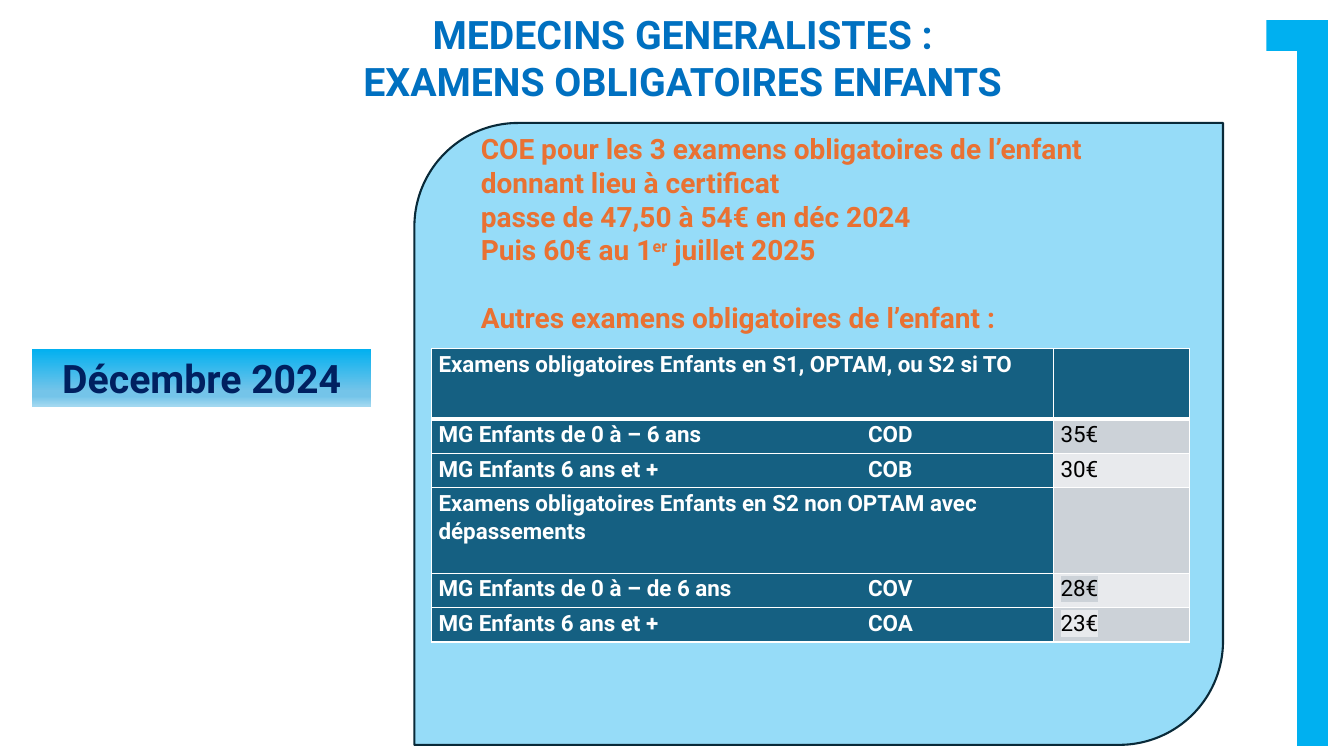
from dataclasses import dataclass

from lxml.etree import SubElement
from pptx import Presentation
from pptx.dml.color import RGBColor
from pptx.enum.shapes import MSO_SHAPE
from pptx.enum.text import MSO_ANCHOR, MSO_AUTO_SIZE, PP_ALIGN
from pptx.oxml.ns import qn
from pptx.util import Inches, Pt


@dataclass(frozen=True)
class Theme:
    font: str = "Roboto"
    title_blue: str = "0070C0"
    bright_blue: str = "00B0F0"
    navy: str = "002060"
    panel: str = "96DCF8"
    panel_edge: str = "092A39"
    orange: str = "E97132"
    table_dark: str = "156082"
    band_dark: str = "CCD2D8"
    band_light: str = "E8EAED"
    white: str = "FFFFFF"
    black: str = "000000"
    title_size: int = 28
    body_size: int = 20
    table_size: int = 16


@dataclass(frozen=True)
class FeeRow:
    label: str
    height: float
    value_fill: str
    code: str = ""
    fee: str = ""
    highlight: str = ""


THEME = Theme()
FEE_ROWS = [
    FeeRow("Examens obligatoires Enfants en S1, OPTAM, ou S2 si TO", 0.7, THEME.table_dark),
    FeeRow("MG Enfants de 0 à – 6 ans", 0.34, THEME.band_dark, "COD", "35€"),
    FeeRow("MG Enfants 6 ans et +", 0.34, THEME.band_light, "COB", "30€"),
    FeeRow("Examens obligatoires Enfants en S2 non OPTAM avec dépassements", 0.85, THEME.band_dark),
    FeeRow("MG Enfants de 0 à – de 6 ans", 0.34, THEME.band_light, "COV", "28€", THEME.band_dark),
    FeeRow("MG Enfants 6 ans et +", 0.34, THEME.band_dark, "COA", "23€", THEME.band_light),
]
COLUMN_WIDTHS = (6.17, 1.35)
CODE_TAB = 4.26


def box(left: float, top: float, width: float, height: float) -> tuple:
    return tuple(Inches(length) for length in (left, top, width, height))


def add_run(paragraph, text: str, size: int, color: str, bold: bool = True):
    run = paragraph.add_run()
    run.text = text
    run.font.name = THEME.font
    run.font.size = Pt(size)
    run.font.bold = bold
    run.font.color.rgb = RGBColor.from_string(color)
    return run


def add_solid_shape(slide, kind: MSO_SHAPE, place: tuple, color: str):
    shape = slide.shapes.add_shape(kind, *place)
    shape.shadow.inherit = False
    shape.fill.solid()
    shape.fill.fore_color.rgb = RGBColor.from_string(color)
    shape.line.fill.background()
    return shape


def add_color(parent, color: str) -> None:
    SubElement(parent, qn("a:srgbClr"), val=color)


def set_gradient(shape, stops: list[tuple[int, str]]) -> None:
    shape.fill.gradient()
    shape.fill.gradient_angle = 270
    stop_list = shape._element.spPr.find(qn("a:gradFill")).find(qn("a:gsLst"))
    for old_stop in list(stop_list):
        stop_list.remove(old_stop)
    for percent, color in stops:
        add_color(SubElement(stop_list, qn("a:gs"), pos=str(percent * 1000)), color)


def set_highlight(run, color: str) -> None:
    properties = run.font._element
    highlight = SubElement(properties, qn("a:highlight"))
    add_color(highlight, color)
    properties.find(qn("a:solidFill")).addnext(highlight)


def format_cell(cell, fill: str, top: int, bottom: int) -> None:
    cell.margin_left = cell.margin_right = Inches(0.07)
    cell.margin_top, cell.margin_bottom = Inches(0.01), 0
    properties = cell._tc.get_or_add_tcPr()
    for side, width in (("L", 1), ("R", 1), ("T", top), ("B", bottom)):
        border = SubElement(properties, qn(f"a:ln{side}"), w=str(Pt(width)))
        add_color(SubElement(border, qn("a:solidFill")), THEME.white)
    cell.fill.solid()
    cell.fill.fore_color.rgb = RGBColor.from_string(fill)
    paragraph = cell.text_frame.paragraphs[0]
    paragraph.line_spacing = 1.07
    paragraph.space_after = Pt(8)


def add_tab_stop(paragraph, position: float) -> None:
    tabs = SubElement(paragraph._p.get_or_add_pPr(), qn("a:tabLst"))
    SubElement(tabs, qn("a:tab"), pos=str(Inches(position)), algn="l")


def add_title(slide) -> None:
    title = slide.shapes.title
    title.left, title.top, title.width, title.height = box(2, 0.05, 9.54, 1.04)
    frame = title.text_frame
    frame.auto_size = MSO_AUTO_SIZE.NONE
    frame.vertical_anchor = MSO_ANCHOR.TOP
    lines = ("MEDECINS GENERALISTES :", "EXAMENS OBLIGATOIRES ENFANTS")
    for index, line in enumerate(lines):
        paragraph = frame.add_paragraph() if index else frame.paragraphs[0]
        paragraph.alignment = PP_ALIGN.CENTER
        add_run(paragraph, line, THEME.title_size, THEME.title_blue)


def add_date_label(slide) -> None:
    label = add_solid_shape(slide, MSO_SHAPE.RECTANGLE, box(0.32, 3.46, 3.36, 0.57), THEME.bright_blue)
    set_gradient(label, [(0, THEME.bright_blue), (74, "74C4E9"), (83, "74C4E9"), (100, "A2D8F0")])
    paragraph = label.text_frame.paragraphs[0]
    paragraph.alignment = PP_ALIGN.CENTER
    add_run(paragraph, "Décembre 2024", THEME.title_size, THEME.navy)


def add_announcement(slide) -> None:
    frame = slide.shapes.add_textbox(*box(4.67, 1.26, 7.02, 2.15)).text_frame
    frame.word_wrap = True
    style = (THEME.body_size, THEME.orange)

    increase = frame.paragraphs[0]
    add_run(increase, "COE pour les 3 examens obligatoires de l’enfant donnant lieu à certificat", *style)
    increase.add_line_break()
    add_run(increase, "passe de 47,50 à 54€ en déc 2024", *style)

    next_step = frame.add_paragraph()
    add_run(next_step, "Puis 60€ au 1", *style)
    ordinal = add_run(next_step, "er", *style)
    ordinal.font._element.set("baseline", "30000")
    add_run(next_step, " juillet 2025", *style)

    other_exams = frame.add_paragraph()
    other_exams.space_before = Pt(24)
    add_run(other_exams, "Autres examens obligatoires de l’enfant :", *style)


def add_fee_table(slide) -> None:
    place = box(4.28, 3.46, sum(COLUMN_WIDTHS), sum(row.height for row in FEE_ROWS))
    table = slide.shapes.add_table(len(FEE_ROWS), len(COLUMN_WIDTHS), *place).table
    table.first_row = table.horz_banding = False
    for column, width in zip(table.columns, COLUMN_WIDTHS):
        column.width = Inches(width)
    for index, row in enumerate(FEE_ROWS):
        table.rows[index].height = Inches(row.height)
        label_cell, fee_cell = table.cell(index, 0), table.cell(index, 1)
        top, bottom = (3 if index == 1 else 1), (3 if index == 0 else 1)
        format_cell(label_cell, THEME.table_dark, top, bottom)
        format_cell(fee_cell, row.value_fill, top, bottom)
        label = label_cell.text_frame.paragraphs[0]
        add_run(label, row.label, THEME.table_size, THEME.white)
        if row.code:
            add_tab_stop(label, CODE_TAB)
            add_run(label, "\t" + row.code, THEME.table_size, THEME.white)
        if row.fee:
            fee = add_run(fee_cell.text_frame.paragraphs[0], row.fee, THEME.table_size, THEME.black, False)
            if row.highlight:
                set_highlight(fee, row.highlight)


def main() -> None:
    deck = Presentation()
    deck.slide_width, deck.slide_height = Inches(13.33), Inches(7.5)
    slide = deck.slides.add_slide(deck.slide_layouts[5])

    # Title and corner bracket
    add_title(slide)
    bracket = add_solid_shape(slide, MSO_SHAPE.CORNER, box(12.56, 0.2, 0.61, 7.2), THEME.bright_blue)
    bracket.rotation = 180

    # Date and content panel
    add_date_label(slide)
    panel = add_solid_shape(slide, MSO_SHAPE.ROUND_2_DIAG_RECTANGLE, box(4.11, 1.22, 8.02, 6.17), THEME.panel)
    panel.line.color.rgb = RGBColor.from_string(THEME.panel_edge)
    panel.line.width = Pt(1.5)

    # Fees
    add_announcement(slide)
    add_fee_table(slide)
    deck.save("out.pptx")


if __name__ == "__main__":
    main()
